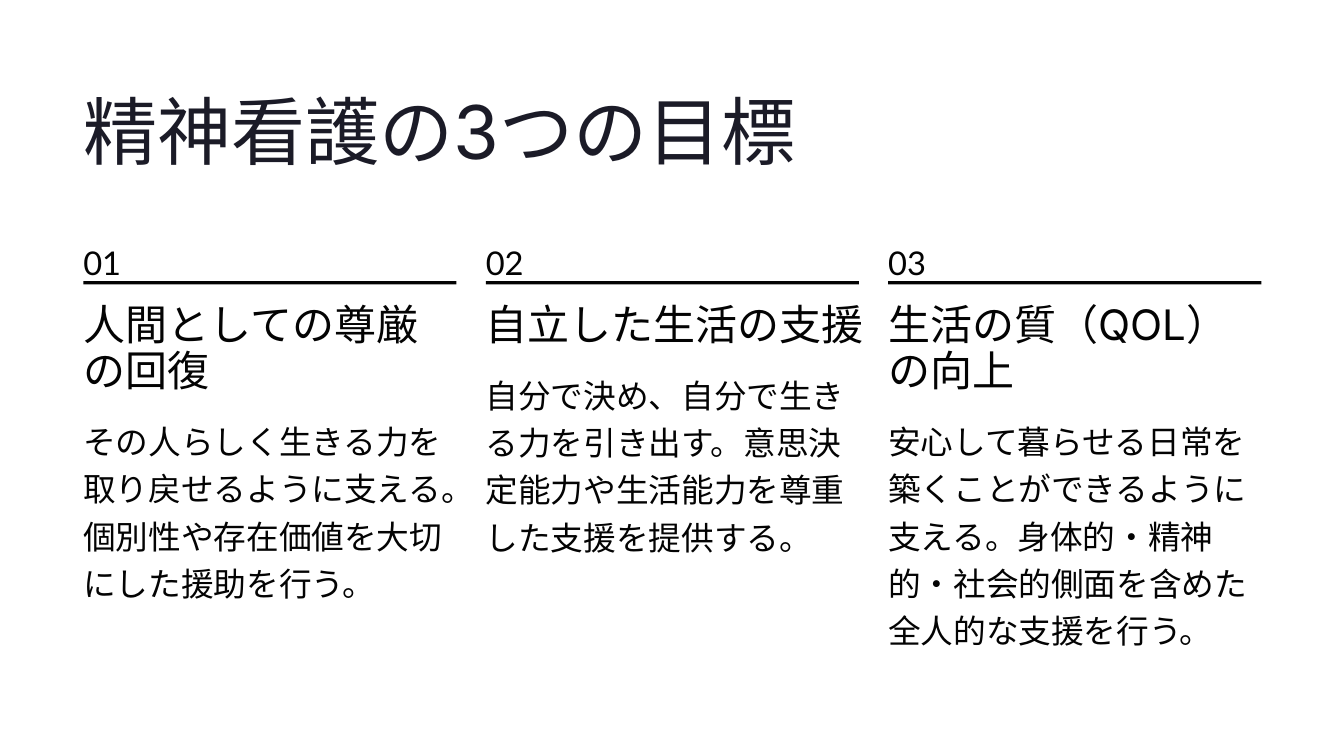
from dataclasses import dataclass

from pptx import Presentation
from pptx.dml.color import RGBColor
from pptx.enum.shapes import MSO_SHAPE
from pptx.enum.text import MSO_ANCHOR, MSO_AUTO_SIZE, PP_ALIGN
from pptx.slide import Slide
from pptx.util import Cm, Pt

INK = "030303"
LEFT, PITCH, COL_W = 2.52, 12.17, 11.28
HEADING_TOP, HEADING_LINE, BODY_GAP, BODY_LINE = 9.17, 1.4, 0.55, 1.44


@dataclass
class Goal:
    """One goal of nursing, with the line counts of its texts."""
    heading: str
    body: str
    heading_lines: int
    body_lines: int


GOALS = [
    Goal("人間としての尊厳の回復",
         "その人らしく生きる力を取り戻せるように支える。個別性や存在価値を大切にした援助を行う。", 2, 4),
    Goal("自立した生活の支援",
         "自分で決め、自分で生きる力を引き出す。意思決定能力や生活能力を尊重した支援を提供する。", 1, 4),
    Goal("生活の質（QOL）の向上",
         "安心して暮らせる日常を築くことができるように支える。身体的・精神的・社会的側面を含めた全人的な支援を行う。", 2, 5),
]


def rgb(value: str) -> RGBColor:
    """Turn a hex string into a colour."""
    return RGBColor.from_string(value)


def set_text(sp, text: str, *, size: float, font: str, spacing: float,
             color: str = INK, wrap: bool = True) -> None:
    """Write one formatted paragraph into a shape without insets."""
    tf = sp.text_frame
    tf.margin_left = tf.margin_top = tf.margin_right = tf.margin_bottom = 0
    tf.auto_size = MSO_AUTO_SIZE.NONE
    tf.vertical_anchor = MSO_ANCHOR.TOP
    tf.word_wrap = wrap
    p = tf.paragraphs[0]
    p.alignment = PP_ALIGN.LEFT
    p.line_spacing = Pt(spacing)
    r = p.add_run()
    r.text = text
    r.font.size, r.font.name = Pt(size), font
    r.font.color.rgb = rgb(color)


def add_text(s: Slide, x: float, y: float, w: float, h: float, text: str, **fmt) -> None:
    """Add a text box placed in centimetres."""
    set_text(s.shapes.add_textbox(Cm(x), Cm(y), Cm(w), Cm(h)), text, **fmt)


def add_rule(s: Slide, x: float) -> None:
    """Add the thin bar under a goal number."""
    sp = s.shapes.add_shape(MSO_SHAPE.RECTANGLE, Cm(x), Cm(8.5), Cm(COL_W), Cm(0.1))
    sp.shadow.inherit = False
    sp.fill.solid()
    sp.fill.fore_color.rgb = rgb(INK)
    sp.line.fill.background()


def add_goal(s: Slide, i: int, goal: Goal) -> None:
    """Draw one column: number, bar, heading and body."""
    x = LEFT + i * PITCH
    heading_h = goal.heading_lines * HEADING_LINE
    add_text(s, x, 7.09, 0.9, 1.12, f"{i + 1:02}", size=28, font="Lato",
             spacing=40.5, wrap=False)
    add_rule(s, x)
    add_text(s, x, HEADING_TOP, COL_W, heading_h, goal.heading, size=36, font="Inter",
             spacing=39.5, wrap=goal.heading_lines > 1)
    add_text(s, x, HEADING_TOP + heading_h + BODY_GAP, COL_W, goal.body_lines * BODY_LINE,
             goal.body, size=28, font="Cabin", spacing=40.5)


def main() -> None:
    """Build and save the slide."""
    prs = Presentation()
    prs.slide_width, prs.slide_height = Cm(40.64), Cm(22.86)
    s = prs.slides.add_slide(prs.slide_layouts[5])
    title = s.shapes.title
    title.left, title.top, title.width, title.height = Cm(LEFT), Cm(2.46), Cm(24), Cm(2.82)
    set_text(title, "精神看護の3つの目標", size=63.5, font="Inter", spacing=79.5,
             color="1B1B27")
    for i, goal in enumerate(GOALS):
        add_goal(s, i, goal)
    prs.save("out.pptx")


if __name__ == "__main__":
    main()
